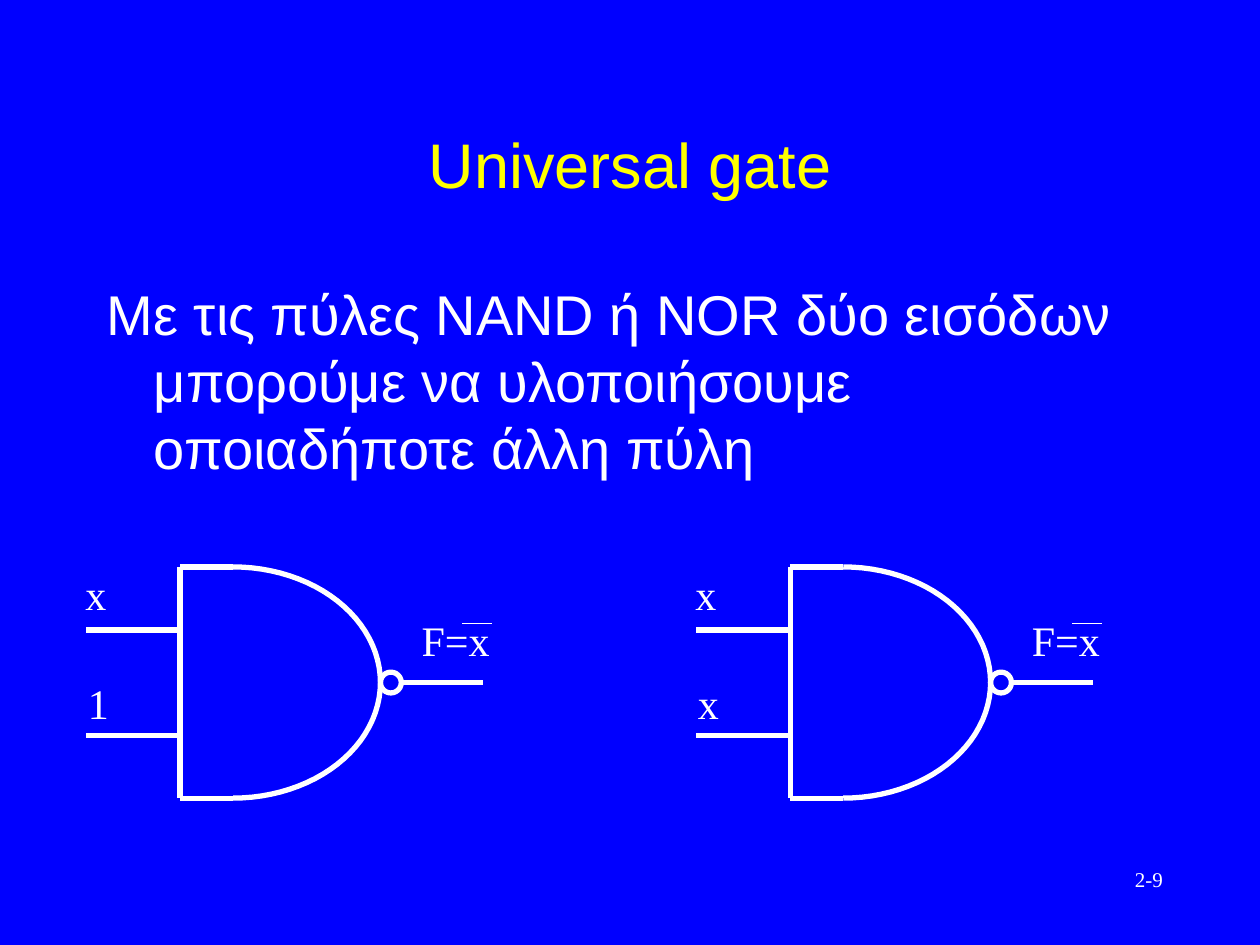
from math import cos, pi, sin

from lxml import etree
from pptx import Presentation
from pptx.dml.color import RGBColor
from pptx.enum.shapes import MSO_CONNECTOR, MSO_SHAPE
from pptx.enum.text import MSO_ANCHOR, MSO_AUTO_SIZE, PP_ALIGN
from pptx.oxml.ns import qn
from pptx.util import Cm, Pt

STRAIGHT = MSO_CONNECTOR.STRAIGHT
OVAL = MSO_SHAPE.OVAL
MIDDLE = MSO_ANCHOR.MIDDLE
FIXED, GROW = MSO_AUTO_SIZE.NONE, MSO_AUTO_SIZE.SHAPE_TO_FIT_TEXT
CENTER, LEFT = PP_ALIGN.CENTER, PP_ALIGN.LEFT

BLUE, YELLOW, WHITE = "0000FF", "FFFF00", "FFFFFF"
SANS, SERIF = "Arial", "Times New Roman"

# Gate geometry in cm
TOP, MIDLINE, BOTTOM = 11.43, 13.76, 16.09
BACK, ARC_START, ARC_END = 3.63, 4.7, 7.67
BUBBLE = 0.42
ARC_STEPS = 24
GATE_PITCH = 12.3


def color(hex_code):
    return RGBColor.from_string(hex_code)


def style_text(paragraph, font_name, size, hex_code):
    for run in paragraph.runs:
        run.font.name = font_name
        run.font.size = Pt(size)
        run.font.color.rgb = color(hex_code)


def fill_placeholder(holder, text, box, size, hex_code, align):
    holder.left, holder.top, holder.width, holder.height = map(Cm, box)
    frame = holder.text_frame
    frame.text = text
    frame.auto_size = FIXED
    paragraph = frame.paragraphs[0]
    paragraph.alignment = align
    style_text(paragraph, SANS, size, hex_code)
    return frame


def add_label(slide, text, left, top, width, height, size=24):
    label = slide.shapes.add_textbox(Cm(left), Cm(top), Cm(width), Cm(height))
    frame = label.text_frame
    frame.text = text
    frame.word_wrap = False
    frame.auto_size = GROW
    style_text(frame.paragraphs[0], SERIF, size, WHITE)


def style_line(line, weight=3):
    line.color.rgb = color(WHITE)
    line.width = Pt(weight)


def add_line(slide, x1, y1, x2, y2, weight=3):
    wire = slide.shapes.add_connector(STRAIGHT, Cm(x1), Cm(y1), Cm(x2), Cm(y2))
    style_line(wire.line, weight)
    etree.SubElement(wire._element.spPr, qn("a:effectLst"))


def style_outline(shape):
    shape.fill.background()
    style_line(shape.line)
    shape.shadow.inherit = False


def add_quarter_arc(slide, x, edge_y):
    """Curve from the flat edge at edge_y to the tip on the midline."""
    angles = [pi / 2 * step / ARC_STEPS for step in range(ARC_STEPS + 1)]
    points = [(Cm(x + (ARC_END - ARC_START) * sin(a)),
               Cm(MIDLINE + (edge_y - MIDLINE) * cos(a))) for a in angles]
    builder = slide.shapes.build_freeform(*points[0])
    builder.add_line_segments(points[1:], close=False)
    style_outline(builder.convert_to_shape())


def add_nand_gate(slide, dx, upper_input, lower_input):
    # Body: curved front, flat edges and back
    for edge_y in (TOP, BOTTOM):
        add_quarter_arc(slide, dx + ARC_START, edge_y)
        add_line(slide, dx + ARC_START, edge_y, dx + BACK, edge_y)
    add_line(slide, dx + BACK, TOP, dx + BACK, BOTTOM)

    # Inputs
    for wire_y in (12.7, 14.82):
        add_line(slide, dx + BACK, wire_y, dx + 1.73, wire_y)
    add_label(slide, upper_input, dx + 1.47, 11.33, 0.94, 1.27)
    add_label(slide, lower_input, dx + 1.52, 13.54, 0.94, 1.27)

    # Inverted output
    add_line(slide, dx + ARC_END + BUBBLE, MIDLINE, dx + 9.73, MIDLINE)
    add_label(slide, "F=x", dx + 8.25, 12.27, 1.88, 1.27)
    bubble = slide.shapes.add_shape(OVAL, Cm(dx + ARC_END), Cm(MIDLINE - BUBBLE / 2),
                                    Cm(BUBBLE), Cm(BUBBLE))
    style_outline(bubble)
    add_line(slide, dx + 9.32, 12.57, dx + 9.91, 12.57, weight=0.75)


def main():
    prs = Presentation()
    prs.slide_width, prs.slide_height = Cm(25.4), Cm(19.05)
    slide = prs.slides.add_slide(prs.slide_layouts[1])
    slide.background.fill.solid()
    slide.background.fill.fore_color.rgb = color(BLUE)

    # Title and statement
    title = fill_placeholder(slide.shapes.title, "Universal gate",
                             (1.9, 1.7, 21.6, 3.17), 36, YELLOW, CENTER)
    title.vertical_anchor = MIDDLE
    statement = fill_placeholder(
        slide.placeholders[1],
        "Με τις πύλες NAND ή NOR δύο εισόδων μπορούμε να υλοποιήσουμε "
        "οποιαδήποτε άλλη πύλη",
        (1.9, 5.5, 21.6, 11.43), 32, WHITE, LEFT)
    paragraph = statement.paragraphs[0]
    paragraph.space_before = Pt(6.4)
    properties = paragraph._p.get_or_add_pPr()
    properties.set("marL", str(Cm(0.95)))
    properties.set("indent", str(-Cm(0.95)))
    etree.SubElement(properties, qn("a:buNone"))

    # Two ways to make an inverter
    for index, inputs in enumerate([("x", "1"), ("x", "x")]):
        add_nand_gate(slide, index * GATE_PITCH, *inputs)

    # Page number
    add_label(slide, "2-9", 22.63, 17.35, 1.35, 0.76, size=12)

    prs.save("out.pptx")


if __name__ == "__main__":
    main()
